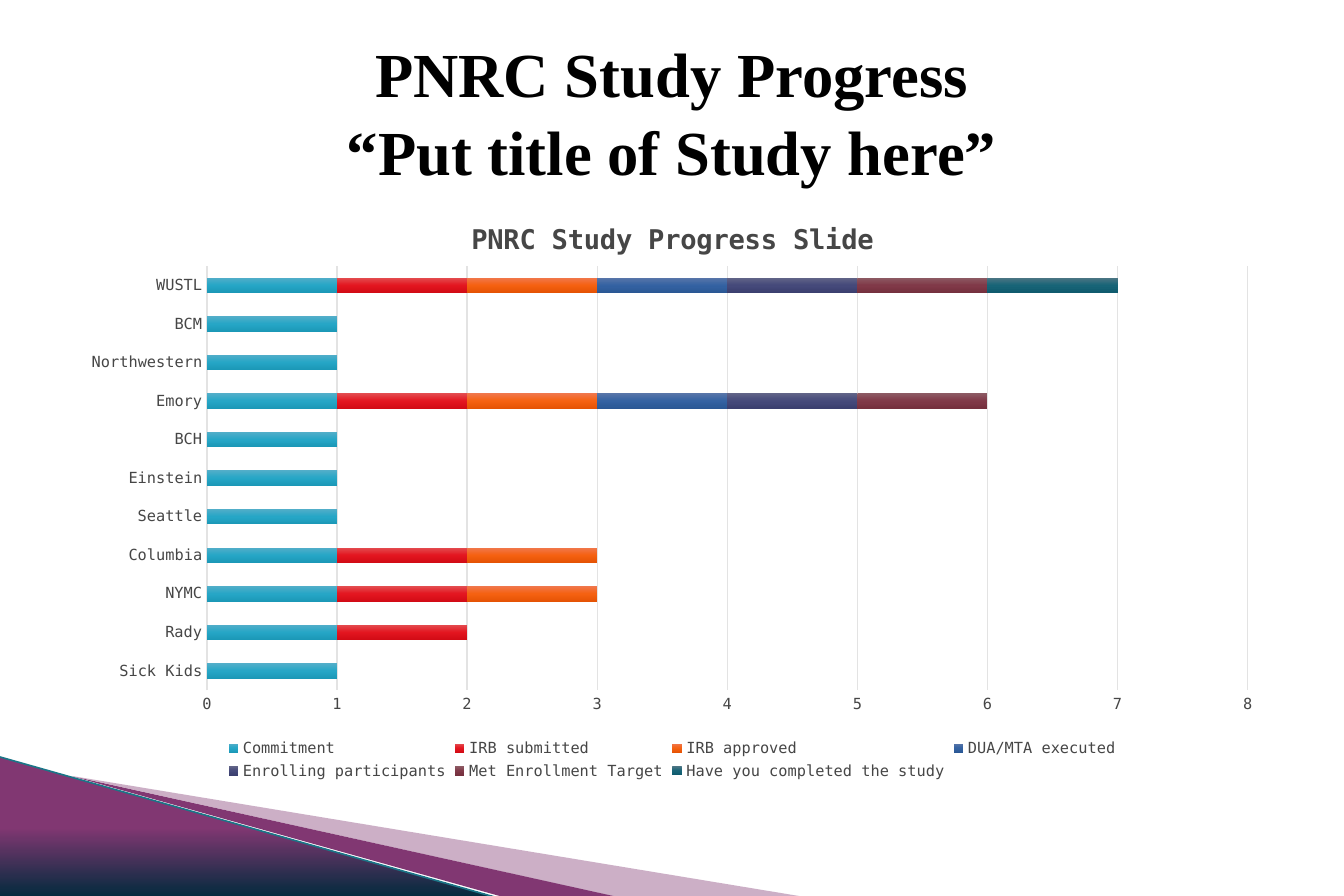
from lxml.etree import SubElement
from pptx import Presentation
from pptx.chart.data import CategoryChartData
from pptx.dml.color import RGBColor
from pptx.enum.chart import (XL_CHART_TYPE, XL_LEGEND_POSITION as LEGEND,
                             XL_TICK_MARK as TICK)
from pptx.enum.shapes import MSO_CONNECTOR, MSO_SHAPE
from pptx.enum.text import MSO_ANCHOR, PP_ALIGN
from pptx.oxml.ns import qn
from pptx.util import Inches, Pt

MONO, SERIF = "DejaVu Sans Mono", "Times New Roman"
PURPLE, NAVY, TEAL, GRAY, GRID = "813772", "002A3C", "1B7587", "464646", "E3E3E3"

HEADING = "PNRC Study Progress\v“Put title of Study here”"
CHART_HEADING = "PNRC Study Progress Slide"

# Milestones in order, each with the colours of its bar from top to bottom
MILESTONES = [
    ("Commitment", ("53AEC9", "26A6C6", "1B98B7")),
    ("IRB submitted", ("E34E51", "E31620", "D20B15")),
    ("IRB approved", ("F0784E", "F56111", "E55304")),
    ("DUA/MTA executed", ("5976A9", "3462A2", "2A5794")),
    ("Enrolling participants", ("626588", "45497A", "3B3F6F")),
    ("Met Enrollment Target", ("8D5B64", "803948", "75303E")),
    ("Have you completed the study", ("4E7684", "176477", "105B6E")),
]

# Milestones reached by each site, from the bottom bar up
SITES = {
    "Sick Kids": 1, "Rady": 2, "NYMC": 3, "Columbia": 3, "Seattle": 1,
    "Einstein": 1, "BCH": 1, "Emory": 6, "Northwestern": 1, "BCM": 1, "WUSTL": 7,
}

# Corner points, colour and opacity in percent
WEDGES = [
    ([(0.6, 6.35), (6.54, 7.33), (5.01, 7.33)], PURPLE, 40),
    ([(0.59, 6.35), (5.02, 7.33), (4.09, 7.33)], PURPLE, 100),
]
CORNER = (-0.01, 6.19, 4.1, 1.16)


def rgb(value):
    return RGBColor.from_string(value)


def set_font(font, size, color, face=MONO, bold=False):
    font.size, font.name, font.bold = Pt(size), face, bold
    font.color.rgb = rgb(color)


def add_text(slide, text, box, size, color, face, bold=False, spacing=1.0):
    frame = slide.shapes.add_textbox(*map(Inches, box)).text_frame
    frame.word_wrap = True
    frame.vertical_anchor = MSO_ANCHOR.MIDDLE
    paragraph = frame.paragraphs[0]
    paragraph.text = text
    paragraph.alignment = PP_ALIGN.CENTER
    paragraph.line_spacing = spacing
    for run in paragraph.runs:
        set_font(run.font, size, color, face, bold)


def fill_downward(fill, properties, colors):
    """Fill with evenly spaced colours running from top to bottom."""
    fill.gradient()
    fill.gradient_angle = 270
    stops = properties.find(qn("a:gradFill")).find(qn("a:gsLst"))
    for stop in list(stops):
        stops.remove(stop)
    for i, color in enumerate(colors):
        position = round(100000 * i / (len(colors) - 1))
        stop = SubElement(stops, qn("a:gs"), pos=str(position))
        SubElement(stop, qn("a:srgbClr"), val=color)


def place(element, **fractions):
    """Set a manual layout inside a chart part, as fractions of the chart."""
    layout = element.find(qn("c:layout"))
    if layout is None:
        layout = element.makeelement(qn("c:layout"))
        text = element.find(qn("c:tx"))
        element.insert(0 if text is None else element.index(text) + 1, layout)
    for child in list(layout):
        layout.remove(child)
    manual = SubElement(layout, qn("c:manualLayout"))
    if "w" in fractions:
        SubElement(manual, qn("c:layoutTarget"), val="inner")
    for side in ("x", "y"):
        SubElement(manual, qn(f"c:{side}Mode"), val="edge")
    for side, value in fractions.items():
        SubElement(manual, qn(f"c:{side}"), val=str(value))


def draw_corner(slide):
    for points, color, opacity in WEDGES:
        start, *rest = [(Inches(x), Inches(y)) for x, y in points]
        builder = slide.shapes.build_freeform(*start)
        builder.add_line_segments(rest, close=True)
        wedge = builder.convert_to_shape()
        wedge.shadow.inherit = False
        wedge.line.fill.background()
        wedge.fill.solid()
        wedge.fill.fore_color.rgb = rgb(color)
        if opacity < 100:
            tint = next(wedge._element.spPr.iter(qn("a:srgbClr")))
            SubElement(tint, qn("a:alpha"), val=str(opacity * 1000))

    left, top, width, height = CORNER
    triangle = slide.shapes.add_shape(MSO_SHAPE.RIGHT_TRIANGLE, *map(Inches, CORNER))
    triangle.shadow.inherit = False
    triangle.line.fill.background()
    fill_downward(triangle.fill, triangle._element.spPr, (PURPLE, PURPLE, NAVY))

    edge = slide.shapes.add_connector(
        MSO_CONNECTOR.STRAIGHT,
        *map(Inches, (left, top, left + width, top + height)))
    edge.line.color.rgb = rgb(TEAL)
    edge.line.width = Pt(0.95)
    SubElement(edge._element.spPr, qn("a:effectLst"))


def add_progress_chart(slide, box):
    data = CategoryChartData()
    data.categories = list(SITES)
    for step, (milestone, _) in enumerate(MILESTONES, 1):
        data.add_series(milestone,
                        [1 if reached >= step else None for reached in SITES.values()])
    chart = slide.shapes.add_chart(
        XL_CHART_TYPE.BAR_STACKED, *map(Inches, box), data).chart
    set_font(chart.font, 10, "000000")

    heading = chart.chart_title
    heading.text_frame.text = CHART_HEADING
    set_font(heading.text_frame.paragraphs[0].runs[0].font, 16, GRAY, bold=True)
    heading.include_in_layout = False
    place(heading._element, x=0.33, y=0.04)
    place(chart._chartSpace.chart.plotArea, x=0.1155, y=0.1235, w=0.8605, h=0.717)

    plot = chart.plots[0]
    plot.gap_width, plot.overlap, plot.vary_by_categories = 150, 100, False
    for series, (_, colors) in zip(plot.series, MILESTONES):
        fill_downward(series.format.fill, series._element.get_or_add_spPr(), colors)

    sites, steps = chart.category_axis, chart.value_axis
    for axis in (sites, steps):
        axis.major_tick_mark = axis.minor_tick_mark = TICK.NONE
        set_font(axis.tick_labels.font, 9, GRAY)
    steps.minimum_scale, steps.maximum_scale, steps.major_unit = 0, 8, 1
    steps.format.line.fill.background()
    for line in (sites.format.line, steps.major_gridlines.format.line):
        line.color.rgb = rgb(GRID)
        line.width = Pt(0.75)

    chart.has_legend = True
    chart.legend.position = LEGEND.BOTTOM
    chart.legend.include_in_layout = False
    set_font(chart.legend.font, 9, GRAY)


def main():
    deck = Presentation()
    deck.slide_width, deck.slide_height = Inches(11), Inches(7.33)
    slide = deck.slides.add_slide(deck.slide_layouts[6])
    draw_corner(slide)
    add_text(slide, HEADING, (0.55, 0.29, 9.9, 1.22), 36.9, "000000", SERIF,
             bold=True, spacing=1.04)
    add_progress_chart(slide, (0.55, 1.58, 9.9, 4.84))
    deck.save("out.pptx")


if __name__ == "__main__":
    main()
